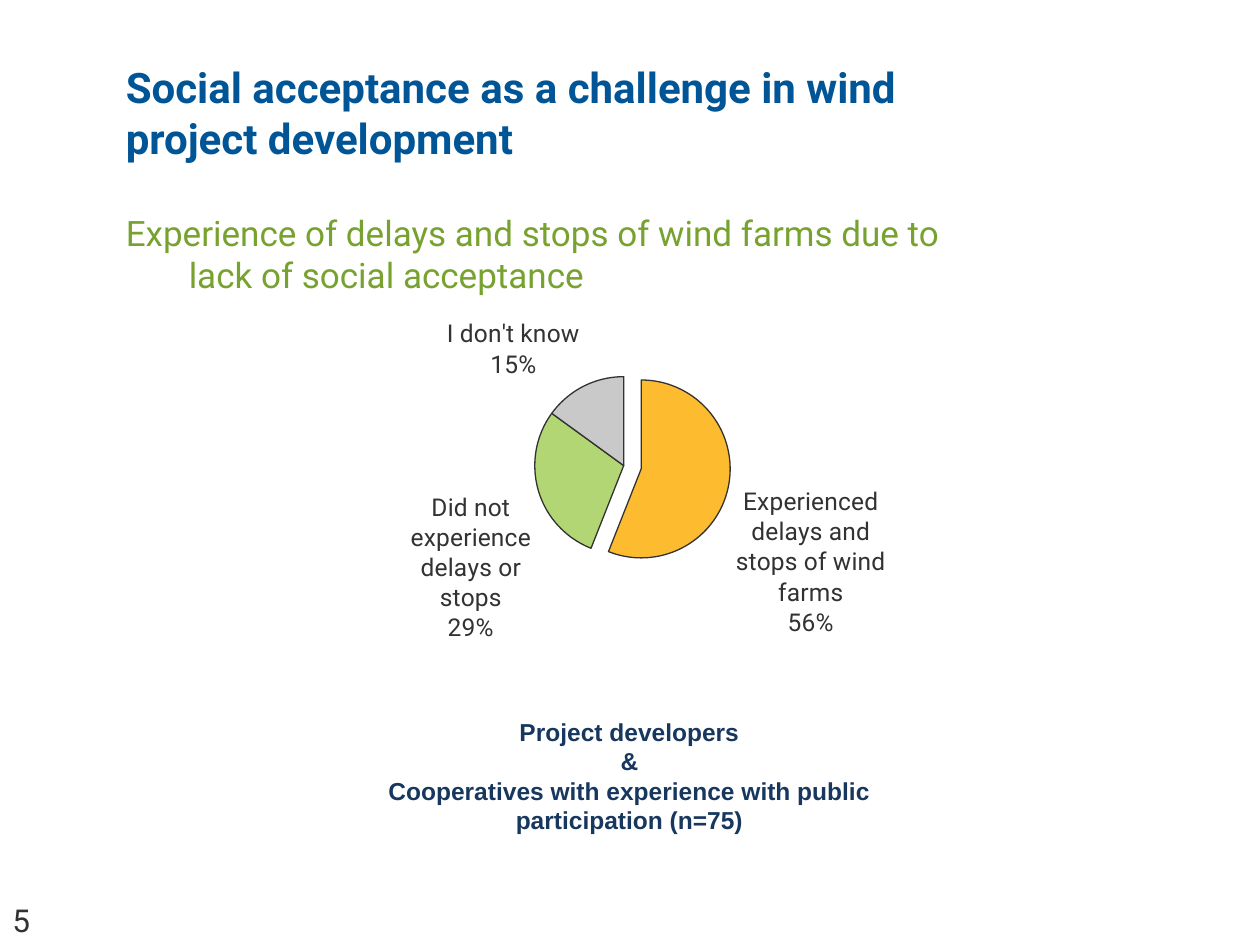
import lxml.etree
import pptx
import pptx.chart.data
import pptx.dml.color
import pptx.enum.chart
import pptx.enum.text
import pptx.oxml
import pptx.oxml.ns
import pptx.util
from pptx.util import Inches

INK = "323232"
TITLE = {"name": "Roboto", "size": 24, "bold": True, "color": "005596"}
SUBTITLE = {"name": "Roboto", "size": 20, "color": "78A22F"}
SAMPLE = {"name": "Arial", "size": 14, "bold": True, "color": "17375E"}
PAGE_NUMBER = {"name": "Roboto", "size": 18, "color": INK}
CHART_TEXT = {"name": "Roboto", "size": 12, "color": INK}
LABEL_TEXT = {"name": "Roboto", "size": 14, "color": INK}

ANSWERS = [
    ("Experienced delays and stops of wind farms", 56, "FDBB30"),
    ("Did not experience delays or stops", 29, "B2D673"),
    ("I don't know", 15, "C9C9C9"),
]


def rgb(value):
    return pptx.dml.color.RGBColor.from_string(value)


def format_font(font, values):
    for key, value in values.items():
        if key == "color":
            font.color.rgb = rgb(value)
        else:
            setattr(font, key, pptx.util.Pt(value) if key == "size" else value)


def add_text(slide, box, lines, font_values, centered=False, hanging=0):
    """Place one paragraph per line; hanging is the indent of wrapped lines in inches."""
    shape = slide.shapes.add_textbox(*map(Inches, box))
    frame = shape.text_frame
    frame.word_wrap = True
    for index, line in enumerate(lines):
        paragraph = frame.paragraphs[0] if index == 0 else frame.add_paragraph()
        paragraph.text = line
        if centered:
            paragraph.alignment = pptx.enum.text.PP_ALIGN.CENTER
        if hanging:
            properties = paragraph._p.get_or_add_pPr()
            properties.set("marL", str(Inches(hanging)))
            properties.set("indent", str(-Inches(hanging)))
        format_font(paragraph.runs[0].font, font_values)


def set_plot_layout(chart, **fractions):
    """Fix the inner plot area as fractions of the chart box."""
    plot_area = chart._chartSpace.chart.plotArea
    for layout in plot_area.findall(pptx.oxml.ns.qn("c:layout")):
        plot_area.remove(layout)
    parts = "".join(f'<c:{key} val="{value}"/>' for key, value in fractions.items())
    plot_area.insert(0, pptx.oxml.parse_xml(
        f'<c:layout {pptx.oxml.ns.nsdecls("c")}><c:manualLayout>'
        '<c:layoutTarget val="inner"/><c:xMode val="edge"/><c:yMode val="edge"/>'
        f'{parts}</c:manualLayout></c:layout>'))


def explode_slice(point, percent):
    data_point = point.format._element if hasattr(point.format, "_element") else None
    if data_point is None:
        data_point = point._ser.get_or_add_dPt_for_point(point._idx)
    explosion = lxml.etree.Element(pptx.oxml.ns.qn("c:explosion"), val=str(percent))
    data_point.find(pptx.oxml.ns.qn("c:spPr")).addprevious(explosion)


def format_labels(labels):
    values = {
        "show_category_name": True,
        "show_percentage": True,
        "show_value": False,
        "number_format": "0%",
        "number_format_is_linked": False,
        "position": pptx.enum.chart.XL_LABEL_POSITION.OUTSIDE_END,
    }
    for key, value in values.items():
        setattr(labels, key, value)
    format_font(labels.font, LABEL_TEXT)
    separator = lxml.etree.Element(pptx.oxml.ns.qn("c:separator"))
    separator.text = "\n"
    last_flag = labels._element.findall(pptx.oxml.ns.qn("c:showPercent"))[-1]
    bubble_flag = labels._element.find(pptx.oxml.ns.qn("c:showBubbleSize"))
    (last_flag if bubble_flag is None else bubble_flag).addnext(separator)


def add_answer_pie(slide, box):
    data = pptx.chart.data.CategoryChartData(number_format="0")
    data.categories = [name for name, _, _ in ANSWERS]
    data.add_series("Series 1", [value for _, value, _ in ANSWERS])
    chart = slide.shapes.add_chart(
        pptx.enum.chart.XL_CHART_TYPE.PIE, *map(Inches, box), data).chart
    chart.has_legend = False
    chart.has_title = False
    format_font(chart.font, CHART_TEXT)
    plot = chart.plots[0]
    plot.vary_by_categories = True
    series = plot.series[0]
    for index, (_, _, color) in enumerate(ANSWERS):
        style = series.points[index].format
        style.fill.solid()
        style.fill.fore_color.rgb = rgb(color)
        style.line.color.rgb = rgb(INK)
        style.line.width = pptx.util.Pt(0.75)
    explode_slice(series.points[0], 20)
    format_labels(series.data_labels)
    set_plot_layout(chart, x=0.39, y=0.14, w=0.23, h=0.42)


def main():
    presentation = pptx.Presentation()
    presentation.slide_width = Inches(10)
    presentation.slide_height = Inches(7.5)
    slide = presentation.slides.add_slide(presentation.slide_layouts[6])
    add_text(slide, (0.9, 0.44, 7.38, 0.71),
             ["Social acceptance as a challenge in wind project development"], TITLE)
    add_text(slide, (0, 7.1, 0.75, 0.4), ["5"], PAGE_NUMBER)
    add_answer_pie(slide, (1.85, 2.51, 6.14, 3.39))
    add_text(slide, (0.9, 1.63, 7.1, 0.77),
             ["Experience of delays and stops of wind farms due to lack of social acceptance"],
             SUBTITLE, hanging=0.5)
    add_text(slide, (2.87, 5.64, 4.25, 1.04),
             ["Project developers", "&",
              "Cooperatives with experience with public participation (n=75)"],
             SAMPLE, centered=True)
    presentation.save("out.pptx")


if __name__ == "__main__":
    main()
